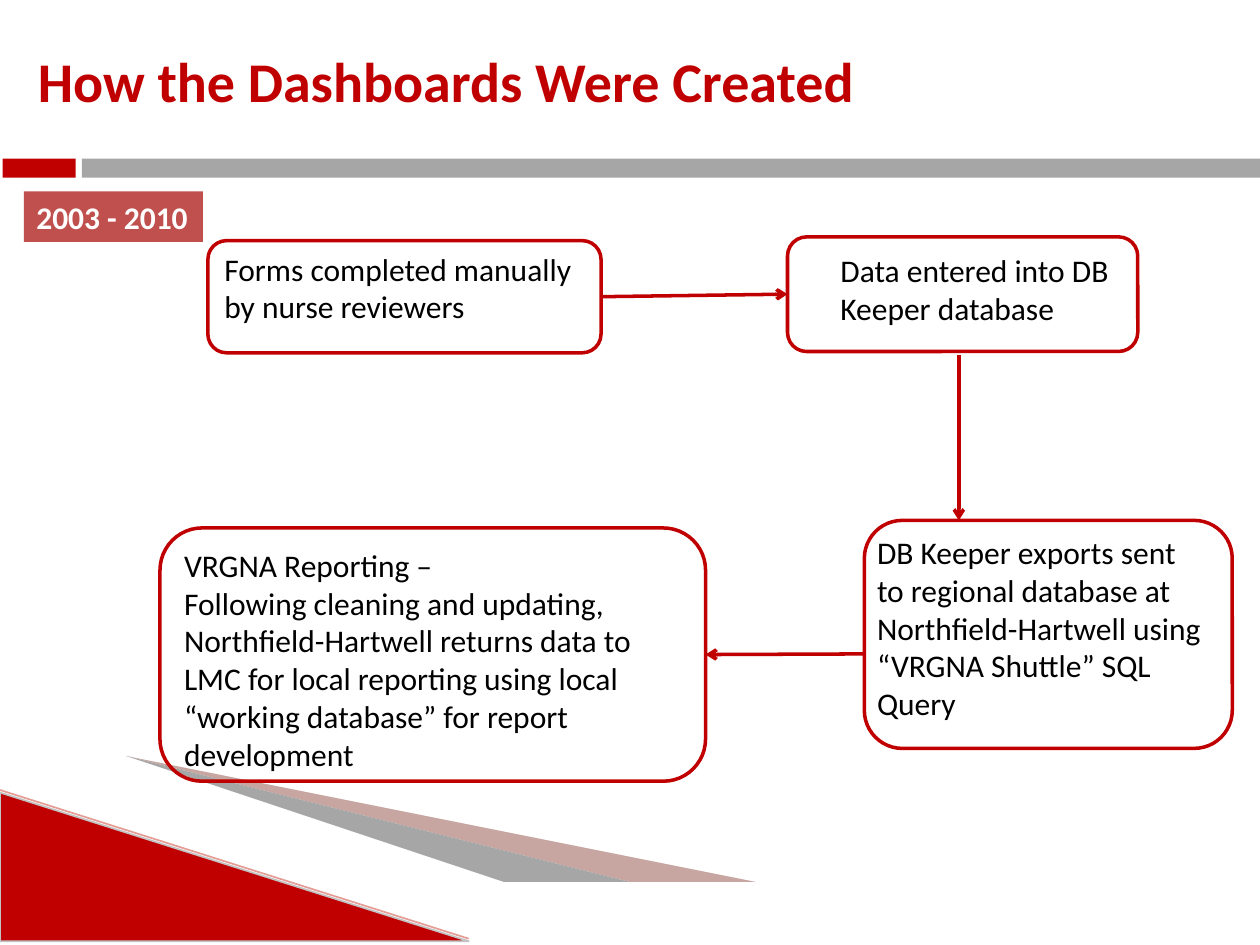
import pptx
import pptx.util
import pptx.dml.color
import pptx.enum.shapes
import pptx.enum.text
import pptx.oxml
import pptx.oxml.ns
from pptx.util import Inches

SHAPE = pptx.enum.shapes.MSO_SHAPE
ANCHOR = pptx.enum.text.MSO_ANCHOR
ALIGN = pptx.enum.text.PP_ALIGN
RED, GRAY, WHITE, BLACK = "C00000", "A6A6A6", "FFFFFF", "000000"
CORNER = 0.16667


def color(code):
    return pptx.dml.color.RGBColor.from_string(code)


def add_xml(parent, tag, **attrs):
    node = pptx.oxml.parse_xml(f"<a:{tag} {pptx.oxml.ns.nsdecls('a')}/>")
    for name, value in attrs.items():
        node.set(name, value)
    parent.append(node)


def paint(shape, fill=None, line=None, width=2):
    shape.shadow.inherit = False
    if fill:
        shape.fill.solid()
        shape.fill.fore_color.rgb = color(fill)
    else:
        shape.fill.background()
    if line:
        shape.line.color.rgb = color(line)
        shape.line.width = pptx.util.Pt(width)
    else:
        shape.line.fill.background()


def add_box(slide, kind, box, **look):
    shape = slide.shapes.add_shape(kind, *map(Inches, box))
    paint(shape, **look)
    return shape


def write(shape, text, size, code, bold=False):
    frame = shape.text_frame
    frame.text = text
    frame.vertical_anchor = ANCHOR.TOP
    for para in frame.paragraphs:
        para.alignment = ALIGN.LEFT
        for run in para.runs:
            run.font.name = "Calibri"
            run.font.size = pptx.util.Pt(size)
            run.font.bold = bold
            run.font.color.rgb = color(code)
    return frame


def add_line(slide, start, end, code=RED, width=2, arrow=True):
    line = slide.shapes.add_connector(
        pptx.enum.shapes.MSO_CONNECTOR.STRAIGHT, *map(Inches, start + end))
    line.line.color.rgb = color(code)
    line.line.width = pptx.util.Pt(width)
    if arrow:
        add_xml(line.line._get_or_add_ln(), "tailEnd", type="arrow")
    add_xml(line._element.spPr, "effectLst")
    return line


def add_wedge(slide, points, fill, alpha=None):
    """Draw a filled outline; alpha is its opacity in percent."""
    pen = slide.shapes.build_freeform(*points[0], scale=Inches(1))
    pen.add_line_segments(points[1:])
    shape = pen.convert_to_shape()
    paint(shape, fill)
    if alpha:
        tint = shape.fill._xPr.find(".//" + pptx.oxml.ns.qn("a:srgbClr"))
        add_xml(tint, "alpha", val=str(alpha * 1000))


def add_corner(slide, left, top, width, height):
    """Draw the fan of wedges in the lower left corner."""
    base = top + height
    add_wedge(slide, [(left + 0.56, top + 0.17), (left + 5.96, base),
                      (left + 4.57, base)], "742217", 40)
    add_wedge(slide, [(left + 0.54, top + 0.16), (left + 4.58, base),
                      (left + 3.73, base)], GRAY)
    add_box(slide, SHAPE.RIGHT_TRIANGLE, (left, top + 0.02, width, height),
            fill=RED, line="C3C1C1", width=1)
    add_line(slide, (left, top), (left + width, base), "E59C94", 0.95, False)


def add_band(slide, left, top, width, height):
    add_box(slide, SHAPE.RECTANGLE, (left, top, width, height), fill=WHITE)
    for start, end, fill in ((0.02, 0.6, RED), (0.65, width, GRAY)):
        add_box(slide, SHAPE.RECTANGLE,
                (left + start, top + 0.01, end - start, height - 0.02),
                fill=fill)


def set_title(slide, text, box):
    title = slide.shapes.title
    title.left, title.top, title.width, title.height = map(Inches, box)
    frame = write(title, text, 32, RED, True)
    frame.margin_left = Inches(0.3)
    frame.word_wrap = True


def add_tag(slide, text, box):
    tag = add_box(slide, SHAPE.RECTANGLE, box, fill="C0504D")
    write(tag, text, 18, WHITE, True).word_wrap = False


def add_step(slide, text, box, pad):
    """Draw a rounded step; pad is the left, top and right gap to its text."""
    step = add_box(slide, SHAPE.ROUNDED_RECTANGLE, box, line=RED)
    frame = write(step, text, 18, BLACK)
    inset = min(box[2:]) * CORNER * 0.29
    left, top, right = (Inches(max(gap - inset, 0)) for gap in pad)
    frame.margin_left, frame.margin_top, frame.margin_right = left, top, right
    frame.margin_bottom = 0
    frame.word_wrap = True
    return step


def add_flow(slide, left, top):
    def place(text, x, y, width, height, pad):
        return add_step(slide, text, (left + x, top + y, width, height), pad)

    forms = place("Forms completed manually by nurse reviewers",
                  0.38, 0.03, 3.12, 0.89, (0.13, 0.07, 0.05))
    entry = place("Data entered into DB Keeper database",
                  4.98, 0, 2.78, 0.91, (0.42, 0.11, 0.1))
    export = place("DB Keeper exports sent to regional database at "
                   "Northfield-Hartwell using “VRGNA Shuttle” SQL Query",
                   5.59, 2.25, 2.92, 1.81, (0.1, 0.1, 0.19))
    report = place("VRGNA Reporting –\nFollowing cleaning and updating, "
                   "Northfield-Hartwell returns data to LMC for local "
                   "reporting using local “working database” for report "
                   "development", 0, 2.31, 4.33, 2.01, (0.19, 0.14, 0.1))

    first = add_line(slide, (left + 3.5, top + 0.48), (left + 4.98, top + 0.45))
    first.begin_connect(forms, 3)
    first.end_connect(entry, 1)
    add_line(slide, (left + 6.34, top + 0.94), (left + 6.34, top + 2.25))
    last = add_line(slide, (left + 5.59, top + 3.31), (left + 4.33, top + 3.31))
    last.end_connect(report, 3)


def main():
    deck = pptx.Presentation()
    deck.slide_width, deck.slide_height = Inches(10), Inches(7.5)
    slide = deck.slides.add_slide(deck.slide_layouts[5])
    add_corner(slide, 0, 6.27, 3.72, 1.18)
    add_band(slide, 0, 1.25, 10, 0.17)
    set_title(slide, "How the Dashboards Were Created", (0, 0.32, 6.97, 0.89))
    add_tag(slide, "2003 - 2010", (0.19, 1.52, 1.42, 0.4))
    add_flow(slide, 1.27, 1.88)
    deck.save("out.pptx")


if __name__ == "__main__":
    main()
